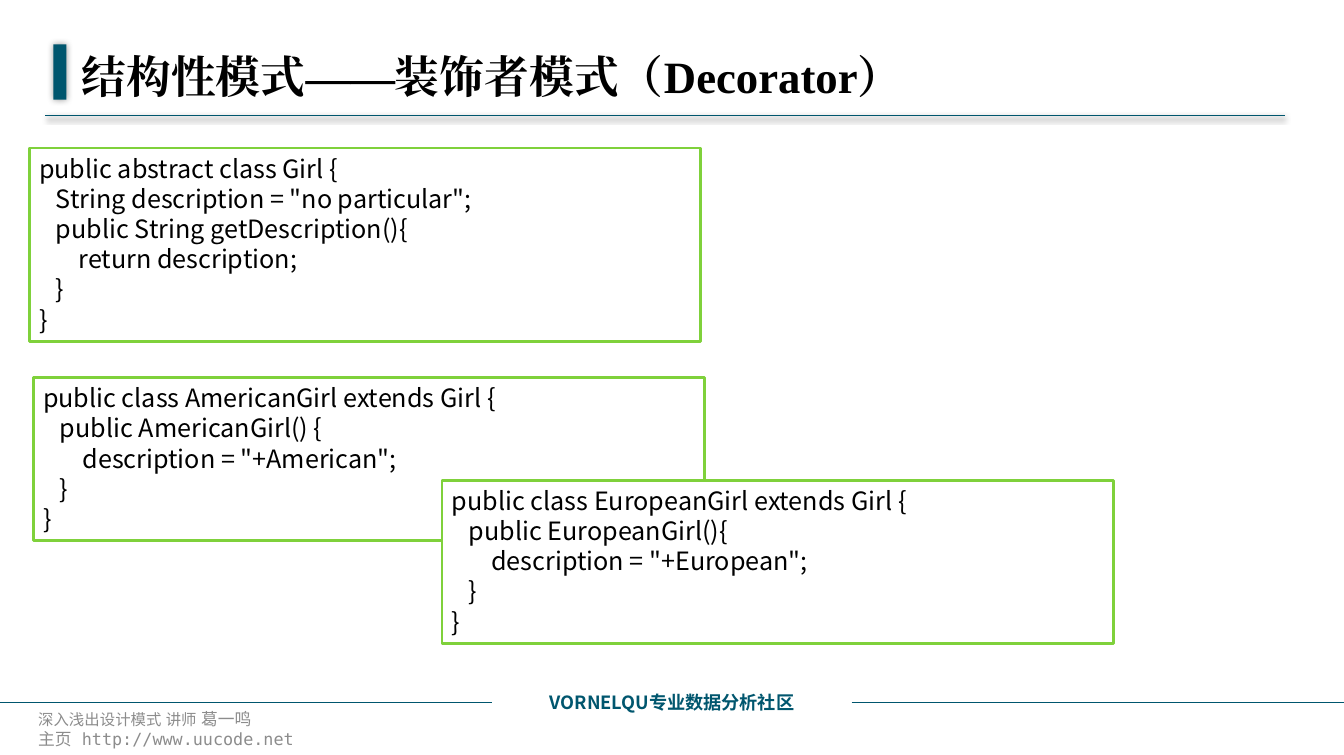
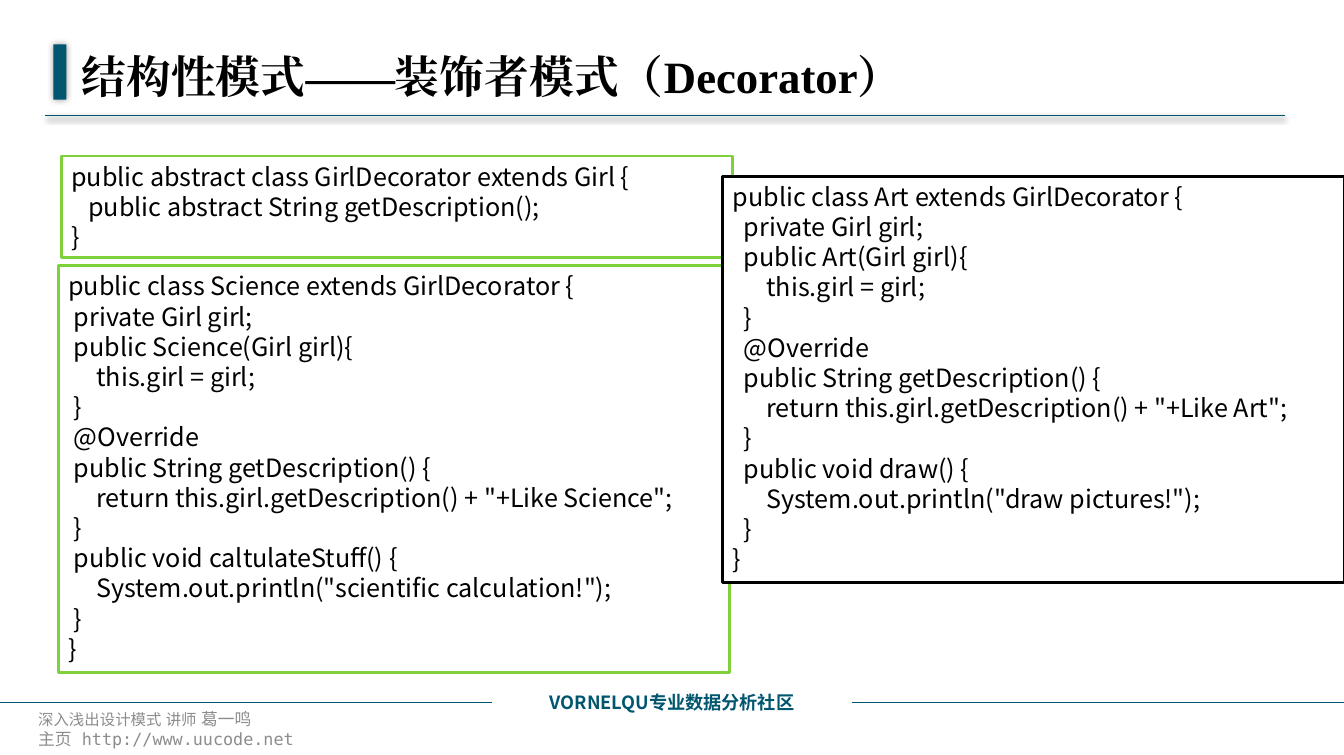
"""Build two slides of Java code for the decorator pattern."""
import pptx
import pptx.util
import pptx.dml.color
import pptx.enum.shapes
import pptx.enum.text
import lxml.etree

PX = 9144
HUES = {"teal": "00566E", "gray": "8C8C8C", "green": "7FD13B",
        "black": "000000", "white": "FFFFFF"}
NOTO, MONO = "Noto Sans CJK SC", "DejaVu Sans Mono"
TITLE = "结构性模式——装饰者模式（Decorator）"
BRAND = "VORNELQU专业数据分析社区"
NOTES = [
    [("深入浅出设计模式 讲师 ", "Arial", 11), ("葛一鸣", MONO, 12)],
    [("主页 http://www.uucode.net", MONO, 12)],
]
RULES = [(0, 489, 698), (846, 1335, 698)]

GIRL = '''public abstract class Girl {
   String description = "no particular";
   public String getDescription(){
       return description;
   }
}'''
USA = '''public class AmericanGirl extends Girl {
   public AmericanGirl() {
       description = "+American";
   }
}'''
EURO = '''public class EuropeanGirl extends Girl {
   public EuropeanGirl(){
       description = "+European";
   }
}'''
BASE = '''public abstract class GirlDecorator extends Girl {
   public abstract String getDescription();
}'''
SCIENCE = '''public class Science extends GirlDecorator {
 private Girl girl;
 public Science(Girl girl){
     this.girl = girl;
 }
 @Override
 public String getDescription() {
     return this.girl.getDescription() + "+Like Science";
 }
 public void caltulateStuff() {
     System.out.println("scientific calculation!");
 }
}'''
ART = '''public class Art extends GirlDecorator {
  private Girl girl;
  public Art(Girl girl){
      this.girl = girl;
  }
  @Override
  public String getDescription() {
      return this.girl.getDescription() + "+Like Art";
  }
  public void draw() {
      System.out.println("draw pictures!");
  }
}'''
SLIDES = [
    [(29, 147, 667, "green", GIRL), (33, 375, 667, "green", USA),
     (439, 477, 667, "green", EURO)],
    [(61, 155, 667, "green", BASE), (58, 264, 667, "green", SCIENCE),
     (718, 175, 617, "black", ART)],
]


def tint(name):
    return pptx.dml.color.RGBColor.from_string(HUES[name])


def shade(shape, blur=0, dist=0, turn=0, alpha=0):
    props = shape._element.spPr
    for old in props.findall(pptx.oxml.ns.qn("a:effectLst")):
        props.remove(old)
    effects = lxml.etree.SubElement(props, pptx.oxml.ns.qn("a:effectLst"))
    if alpha:
        glow = lxml.etree.SubElement(
            effects, pptx.oxml.ns.qn("a:outerShdw"), blurRad=str(int(blur * 12700)),
            dist=str(int(dist * 12700)), dir=str(turn * 60000), algn="ctr", rotWithShape="0")
        hue = lxml.etree.SubElement(glow, pptx.oxml.ns.qn("a:srgbClr"), val=HUES["black"])
        lxml.etree.SubElement(hue, pptx.oxml.ns.qn("a:alpha"), val=str(alpha * 1000))


def style(run, face, size, hue, bold=False):
    font = run.font
    font.name, font.size, font.bold = face, pptx.util.Pt(size), bold
    font.color.rgb = tint(hue)
    east = lxml.etree.Element(pptx.oxml.ns.qn("a:ea"), typeface=face)
    run._r.rPr.find(pptx.oxml.ns.qn("a:latin")).addnext(east)


def rule(slide, left, right, top):
    line = slide.shapes.add_connector(pptx.enum.shapes.MSO_CONNECTOR.STRAIGHT,
                                      left * PX, top * PX, right * PX, top * PX)
    line.line.color.rgb = tint("teal")
    line.line.width = pptx.util.Pt(1)
    shade(line)
    return line


def box(slide, left, top, width, height, inset=(10, 5), middle=True):
    shape = slide.shapes.add_textbox(left * PX, top * PX, width * PX, height * PX)
    frame = shape.text_frame
    frame.word_wrap = True
    frame.margin_left = frame.margin_right = inset[0] * PX
    frame.margin_top = frame.margin_bottom = inset[1] * PX
    if middle:
        frame.vertical_anchor = pptx.enum.text.MSO_ANCHOR.MIDDLE
    return shape


def label(slide, place, text, face, size, hue, inset=(10, 5)):
    para = box(slide, *place, inset).text_frame.paragraphs[0]
    para.text = text
    style(para.runs[0], face, size, hue, True)
    return para


def frame(slide):
    shade(rule(slide, 45, 1276, 115), 4, 1.6, 90, 42)
    notes = box(slide, 26, 704, 473, 40, (12, 6)).text_frame
    for row, parts in enumerate(NOTES):
        para = notes.add_paragraph() if row else notes.paragraphs[0]
        for text, face, size in parts:
            run = para.add_run()
            run.text = text
            style(run, face, size, "gray")
    bar = slide.shapes.add_shape(pptx.enum.shapes.MSO_SHAPE.RECTANGLE,
                                 53 * PX, 44 * PX, 13 * PX, 55 * PX)
    bar.fill.solid()
    bar.fill.fore_color.rgb = tint("teal")
    bar.line.fill.background()
    shade(bar, 5, 0, 0, 40)
    for ends in RULES:
        rule(slide, *ends)
    brand = label(slide, (489, 682, 357, 32), BRAND, NOTO, 13, "teal")
    brand.alignment = pptx.enum.text.PP_ALIGN.CENTER
    label(slide, (69, 44, 905, 63), TITLE, "Times New Roman", 32, "black", (12, 6))


def code(slide, left, top, width, edge, text):
    rows = text.count("\n") + 1
    shape = box(slide, left, top, width, round(30.3 * rows + 10), middle=False)
    shape.fill.solid()
    shape.fill.fore_color.rgb = tint("white")
    shape.line.color.rgb = tint(edge)
    shape.line.width = pptx.util.Pt(2)
    shape.text_frame.text = text
    for para in shape.text_frame.paragraphs:
        style(para.runs[0], NOTO, 18, "black")


def main():
    deck = pptx.Presentation()
    deck.slide_width, deck.slide_height = 1335 * PX, 750 * PX
    for blocks in SLIDES:
        slide = deck.slides.add_slide(deck.slide_layouts[6])
        frame(slide)
        for block in blocks:
            code(slide, *block)
    deck.save("out.pptx")


if __name__ == "__main__":
    main()
